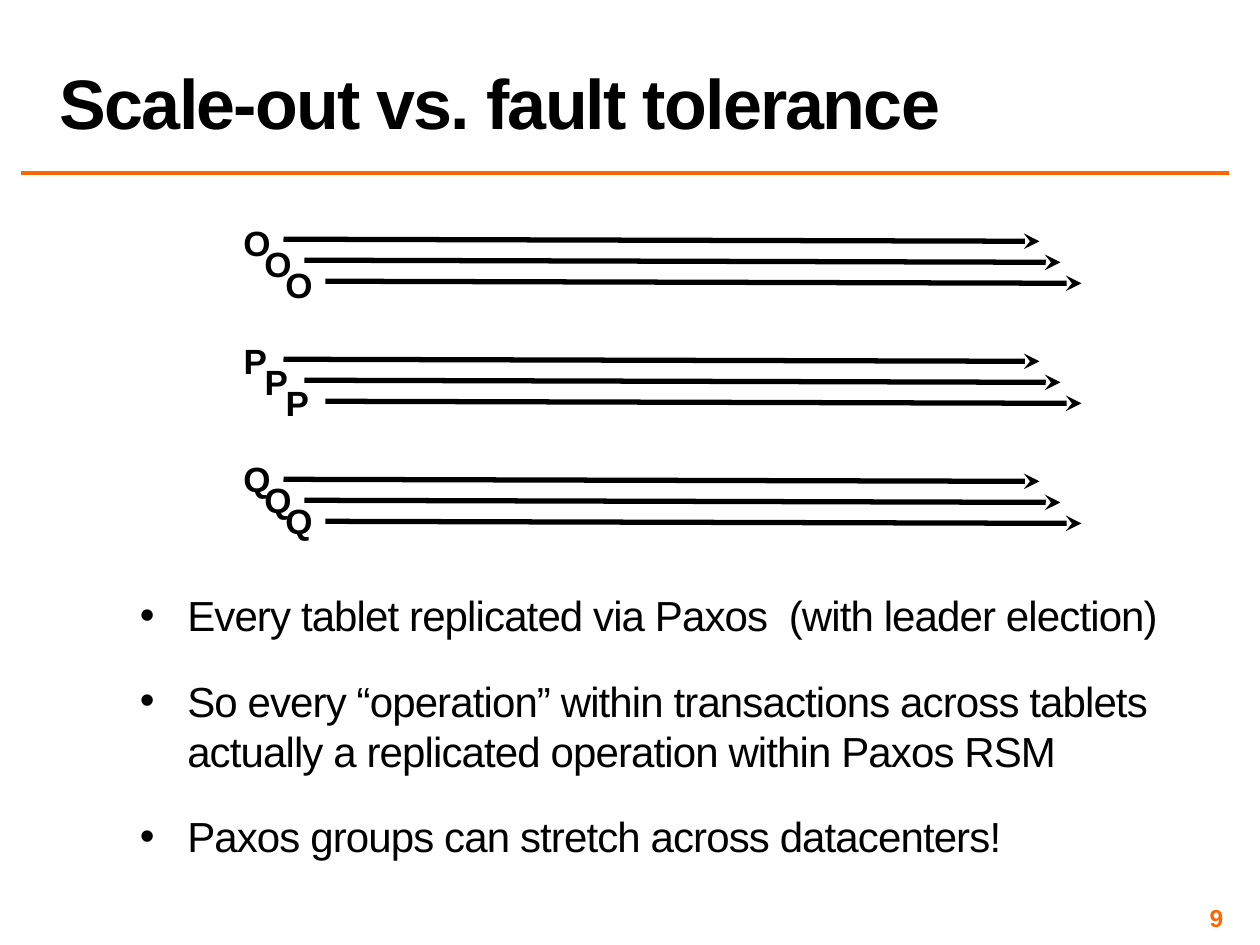
from lxml import etree
from pptx import Presentation
from pptx import util as u
from pptx.dml.color import RGBColor
from pptx.enum import shapes, text
from pptx.oxml.ns import qn

Pt = u.Pt
COLORS = {"text": "000000", "accent": "FF6600"}
FONT = "Arial"


class SlideBuilder:
    """Holds the style and the current slide."""

    def __init__(self, slide):
        self.slide = slide

    def place(self, shape, left, top, width, height):
        shape.left, shape.top = Pt(left), Pt(top)
        shape.width, shape.height = Pt(width), Pt(height)

    def style(self, paragraph, size, color="text", bold=False, spacing=None):
        for run in paragraph.runs:
            run.font.name = FONT
            run.font.size = Pt(size)
            run.font.bold = bold
            run.font.color.rgb = RGBColor.from_string(COLORS[color])
            if spacing is not None:
                run._r.get_or_add_rPr().set("spc", str(int(spacing * 100)))

    def margins(self, frame, size):
        frame.margin_left = frame.margin_right = Pt(size)
        frame.margin_top = frame.margin_bottom = Pt(size)

    def title(self, words, box):
        shape = self.slide.shapes.title
        self.place(shape, *box)
        frame = shape.text_frame
        frame.text = words
        frame.auto_size = text.MSO_AUTO_SIZE.NONE
        frame.vertical_anchor = text.MSO_ANCHOR.BOTTOM
        paragraph = frame.paragraphs[0]
        paragraph.alignment = text.PP_ALIGN.LEFT
        paragraph.line_spacing = 0.8
        self.style(paragraph, 40, bold=True, spacing=-1)

    def bullets(self, items, box):
        shape = self.slide.placeholders[1]
        self.place(shape, *box)
        frame = shape.text_frame
        frame.text = "\n".join(items)
        frame.auto_size = text.MSO_AUTO_SIZE.NONE
        self.margins(frame, 3)
        for paragraph in frame.paragraphs:
            paragraph.space_before, paragraph.space_after = Pt(12), Pt(8)
            properties = paragraph._p.get_or_add_pPr()
            properties.set("marL", str(Pt(27)))
            properties.set("indent", str(-Pt(27)))
            etree.SubElement(properties, qn("a:buChar")).set("char", "•")
            self.style(paragraph, 24, spacing=-0.5)

    def line(self, parent, start, end, color, width, arrow=False):
        connector = parent.shapes.add_connector(
            shapes.MSO_CONNECTOR.STRAIGHT, *map(Pt, start + end))
        connector.line.color.rgb = RGBColor.from_string(COLORS[color])
        connector.line.width = Pt(width)
        if arrow:
            outline = connector.line._get_or_add_ln()
            etree.SubElement(outline, qn("a:tailEnd")).set("type", "stealth")
        etree.SubElement(connector._element.spPr, qn("a:effectLst"))

    def label(self, parent, words, box, size, color, align, wrap=True, margin=None):
        shape = parent.shapes.add_textbox(*map(Pt, box))
        frame = shape.text_frame
        frame.text = words
        frame.word_wrap = wrap
        if margin is not None:
            self.margins(frame, margin)
            frame.vertical_anchor = text.MSO_ANCHOR.MIDDLE
        if not wrap:
            frame.auto_size = text.MSO_AUTO_SIZE.SHAPE_TO_FIT_TEXT
        paragraph = frame.paragraphs[0]
        paragraph.alignment = align
        self.style(paragraph, size, color, bold=True)

    def timeline(self, name, width, left, line_top, label_top):
        group = self.slide.shapes.add_group_shape()
        self.line(group, (left, line_top), (left + 432, line_top + 1.2),
                  "text", 3, arrow=True)
        self.label(group, name, (left - 30.2, label_top, width, 31.5), 20,
                   "text", text.PP_ALIGN.CENTER, wrap=False)


def main():
    presentation = Presentation()
    presentation.slide_width, presentation.slide_height = Pt(720), Pt(540)
    slide = presentation.slides.add_slide(presentation.slide_layouts[1])
    builder = SlideBuilder(slide)

    # Heading, rule and page number
    builder.line(slide, (12, 98.8), (702, 98.8), "accent", 2)
    builder.label(slide, "9", (534, 516, 168, 16.8), 14, "accent",
                  text.PP_ALIGN.RIGHT, margin=3)
    builder.title("Scale-out vs. fault tolerance", (27, 1.2, 675, 84))

    # Three replicas of each tablet, staggered diagonally
    for row, (name, width) in enumerate((("O", 30.2), ("P", 28.1), ("Q", 30.2))):
        for replica in range(3):
            shift = 12 * replica
            builder.timeline(name, width, 162 + shift,
                             136.7 + 68.6 * row + shift,
                             123.2 + 67.3 * row + shift)

    # Takeaways
    builder.bullets((
        "Every tablet replicated via Paxos  (with leader election)",
        "So every “operation” within transactions across tablets "
        "actually a replicated operation within Paxos RSM",
        "Paxos groups can stretch across datacenters!",
    ), (77, 334, 611, 211))

    presentation.save("out.pptx")


if __name__ == "__main__":
    main()
